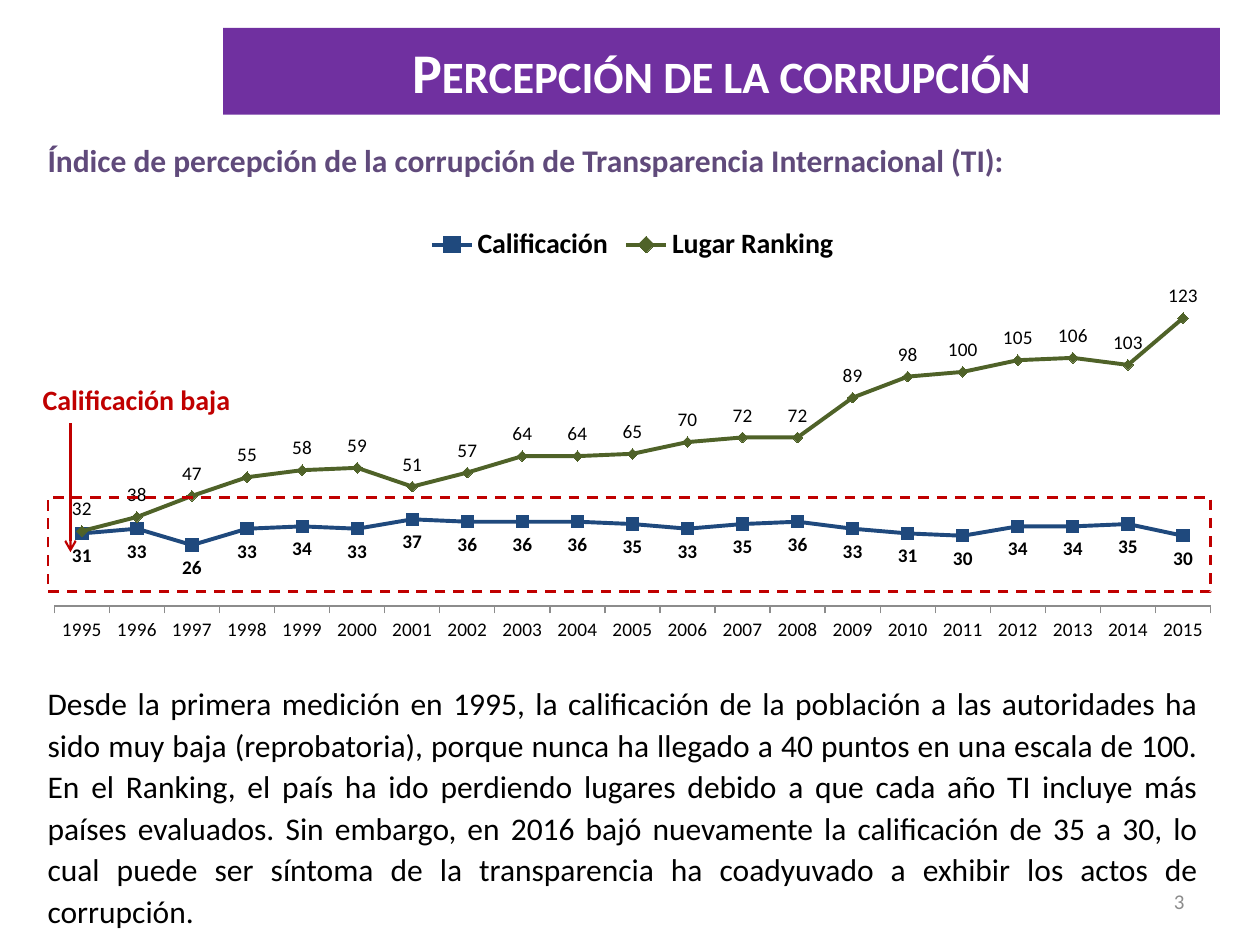
"""Build the slide on the perception of corruption index."""
from dataclasses import dataclass

from lxml import etree
from pptx import Presentation
from pptx import util as u
from pptx.chart.data import CategoryChartData
from pptx.dml.color import RGBColor
from pptx.enum import chart as ch
from pptx.enum import dml, shapes, text
from pptx.oxml import parse_xml
from pptx.oxml.ns import nsdecls, qn

FONT = "Calibri"
PURPLE = RGBColor(0x70, 0x30, 0xA0)
VIOLET = RGBColor(0x60, 0x4A, 0x7B)
RED = RGBColor(0xC0, 0x00, 0x00)
NAVY = RGBColor(0x1F, 0x49, 0x7D)
GREEN = RGBColor(0x4F, 0x62, 0x28)
GRAY = RGBColor(0x8C, 0x8C, 0x8C)
WHITE = RGBColor(0xFF, 0xFF, 0xFF)
BLACK = RGBColor(0, 0, 0)


@dataclass(frozen=True)
class Box:
    left: float
    top: float
    width: float
    height: float

    def lengths(self) -> list:
        return [u.Cm(v) for v in (self.left, self.top, self.width, self.height)]


@dataclass(frozen=True)
class Note:
    box: Box
    words: str
    size: int
    color: RGBColor
    bold: bool = False
    align: text.PP_ALIGN = text.PP_ALIGN.LEFT
    anchor: text.MSO_ANCHOR = text.MSO_ANCHOR.TOP
    wrap: bool = True
    line_spacing: float = 1.0


@dataclass(frozen=True)
class Measure:
    name: str
    values: tuple
    color: RGBColor
    marker: ch.XL_MARKER_STYLE
    marker_size: int
    label_position: ch.XL_LABEL_POSITION
    bold: bool


NOTES = (
    Note(Box(18.21, 17.65, 5.92, 1.02), "3", 12, GRAY,
         align=text.PP_ALIGN.RIGHT, anchor=text.MSO_ANCHOR.MIDDLE),
    Note(Box(0.71, 2.72, 20.32, 1.02),
         "Índice de percepción de la corrupción de Transparencia Internacional (TI):",
         18, VIOLET, bold=True, wrap=False),
    Note(Box(0.71, 13.59, 23.7, 5.33),
         "Desde la primera medición en 1995, la calificación de la población a las "
         "autoridades ha sido muy baja (reprobatoria), porque nunca ha llegado a 40 "
         "puntos en una escala de 100. En el Ranking, el país ha ido perdiendo lugares "
         "debido a que cada año TI incluye más países evaluados. Sin embargo, en 2016 "
         "bajó nuevamente la calificación de 35 a 30, lo cual puede ser síntoma de la "
         "transparencia ha coadyuvado a exhibir los actos de corrupción.",
         18, BLACK, align=text.PP_ALIGN.JUSTIFY, line_spacing=1.1),
)
LOW_SCORE = Note(Box(0.61, 7.59, 6.4, 0.94), "Calificación baja", 16, RED, bold=True)
MEASURES = (
    Measure("Calificación",
            (31, 33, 26, 33, 34, 33, 37, 36, 36, 36, 35, 33, 35, 36, 33, 31, 30, 34, 34, 35, 30),
            NAVY, ch.XL_MARKER_STYLE.SQUARE, 7, ch.XL_LABEL_POSITION.BELOW, True),
    Measure("Lugar Ranking",
            (32, 38, 47, 55, 58, 59, 51, 57, 64, 64, 65, 70, 72, 72, 89, 98, 100, 105, 106, 103, 123),
            GREEN, ch.XL_MARKER_STYLE.DIAMOND, 6, ch.XL_LABEL_POSITION.ABOVE, False),
)


def set_font(font, size: int, color: RGBColor, bold: bool = False) -> None:
    font.name, font.size, font.bold = FONT, u.Pt(size), bold
    font.color.rgb = color


def add_note(slide, note: Note) -> None:
    frame = slide.shapes.add_textbox(*note.box.lengths()).text_frame
    frame.word_wrap = note.wrap
    frame.vertical_anchor = note.anchor
    paragraph = frame.paragraphs[0]
    paragraph.alignment = note.align
    paragraph.line_spacing = note.line_spacing
    run = paragraph.add_run()
    run.text = note.words
    set_font(run.font, note.size, note.color, note.bold)


def format_title(title, box: Box) -> None:
    title.left, title.top, title.width, title.height = box.lengths()
    title.fill.solid()
    title.fill.fore_color.rgb = PURPLE
    frame = title.text_frame
    frame.auto_size = text.MSO_AUTO_SIZE.NONE
    frame.vertical_anchor = text.MSO_ANCHOR.MIDDLE
    paragraph = frame.paragraphs[0]
    paragraph.alignment = text.PP_ALIGN.CENTER
    run = paragraph.add_run()
    run.text = "Percepción de la corrupción"
    set_font(run.font, 32, WHITE, True)
    run.font._element.set("cap", "small")


def format_series(series, measure: Measure) -> None:
    series.smooth = False
    series.format.line.color.rgb = measure.color
    series.format.line.width = u.Pt(2.25)
    marker = series.marker
    marker.style, marker.size = measure.marker, measure.marker_size
    marker.format.fill.solid()
    marker.format.fill.fore_color.rgb = measure.color
    marker.format.line.color.rgb = measure.color
    labels = series.data_labels
    labels.show_value = True
    labels.position = measure.label_position
    labels.number_format, labels.number_format_is_linked = "#,##0", False
    set_font(labels.font, 11, BLACK, measure.bold)


def add_index_chart(slide, box: Box) -> None:
    data = CategoryChartData()
    data.categories = [str(year) for year in range(1995, 2016)]
    for measure in MEASURES:
        data.add_series(measure.name, measure.values)
    chart = slide.shapes.add_chart(
        ch.XL_CHART_TYPE.LINE_MARKERS, *box.lengths(), data).chart
    set_font(chart.font, 18, BLACK)
    chart.has_title = False
    chart.has_legend = True
    chart.legend.position = ch.XL_LEGEND_POSITION.TOP
    chart.legend.include_in_layout = False
    set_font(chart.legend.font, 16, BLACK, True)
    years, scale = chart.category_axis, chart.value_axis
    years.major_tick_mark = ch.XL_TICK_MARK.OUTSIDE
    years.format.line.color.rgb = GRAY
    set_font(years.tick_labels.font, 11, BLACK)
    scale.visible = scale.has_major_gridlines = False
    scale.minimum_scale, scale.maximum_scale = 0, 140
    plot = chart.plots[0]
    plot.vary_by_categories = False
    for series, measure in zip(plot.series, MEASURES):
        format_series(series, measure)
    area = chart._chartSpace.chart.plotArea
    for old in area.findall(qn("c:layout")):
        area.remove(old)
    area.insert(0, parse_xml(
        f'<c:layout {nsdecls("c")}><c:manualLayout><c:layoutTarget val="inner"/>'
        '<c:xMode val="edge"/><c:yMode val="edge"/><c:x val="0.02"/><c:y val="0.15"/>'
        '<c:w val="0.96"/><c:h val="0.75"/></c:manualLayout></c:layout>'))


def add_dashed_frame(slide, box: Box) -> None:
    frame = slide.shapes.add_shape(shapes.MSO_SHAPE.RECTANGLE, *box.lengths())
    frame.shadow.inherit = False
    frame.fill.background()
    frame.line.color.rgb = RED
    frame.line.width = u.Pt(1.5)
    frame.line.dash_style = dml.MSO_LINE.DASH


def add_down_arrow(slide, x: float, top: float, bottom: float) -> None:
    arrow = slide.shapes.add_connector(
        shapes.MSO_CONNECTOR.STRAIGHT, u.Cm(x), u.Cm(top), u.Cm(x), u.Cm(bottom))
    arrow.line.color.rgb = RED
    arrow.line.width = u.Pt(1.25)
    etree.SubElement(arrow.line._get_or_add_ln(), qn("a:tailEnd"), type="arrow")
    etree.SubElement(arrow._element.spPr, qn("a:effectLst"))


def main() -> None:
    deck = Presentation()
    deck.slide_width, deck.slide_height = u.Cm(25.4), u.Cm(19.05)
    slide = deck.slides.add_slide(deck.slide_layouts[5])
    format_title(slide.shapes.title, Box(4.5, 0.56, 20.09, 1.75))
    for note in NOTES:
        add_note(slide, note)
    add_index_chart(slide, Box(0.61, 4.29, 24.28, 8.81))
    add_dashed_frame(slide, Box(0.97, 10.03, 23.44, 1.9))
    add_note(slide, LOW_SCORE)
    add_down_arrow(slide, 1.42, 8.53, 11.13)
    deck.save("out.pptx")


if __name__ == "__main__":
    main()
